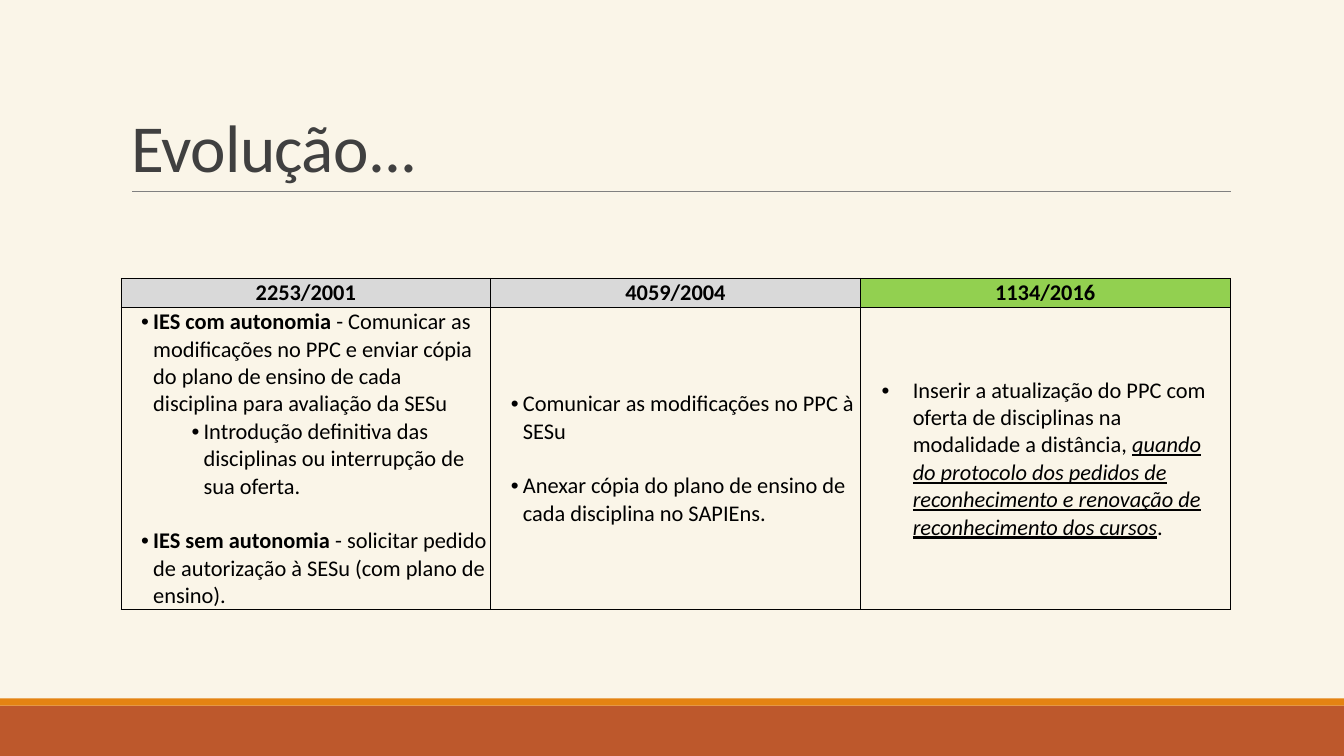
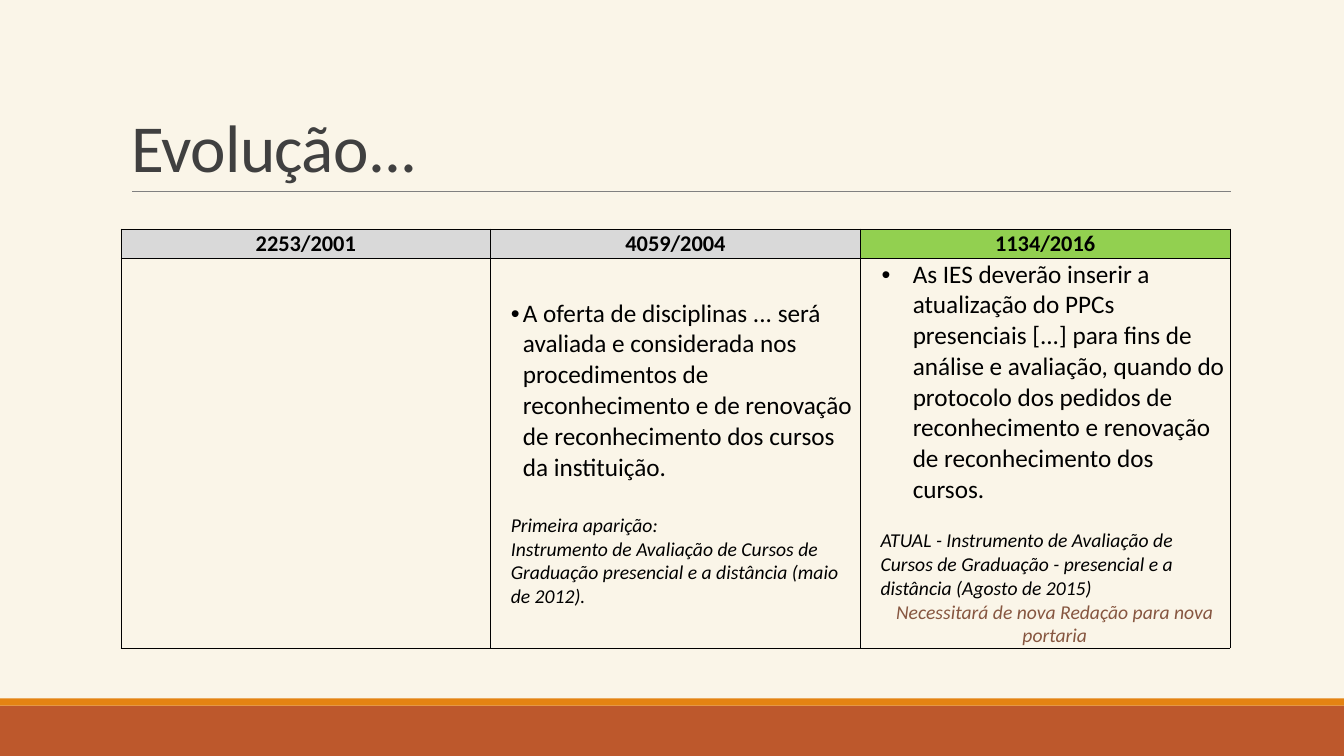
from dataclasses import dataclass

from lxml.etree import SubElement
from pptx import Presentation
from pptx.dml.color import RGBColor
from pptx.enum.shapes import MSO_CONNECTOR, MSO_SHAPE
from pptx.enum.text import MSO_ANCHOR, MSO_AUTO_SIZE, PP_ALIGN
from pptx.oxml import parse_xml
from pptx.oxml.ns import nsdecls, qn
from pptx.util import Inches, Pt


@dataclass(frozen=True)
class Theme:
    font: str = "Calibri"
    background: str = "FAF5E8"
    footer: str = "BD582C"
    accent: str = "E48312"
    rule: str = "808080"
    title: str = "404040"
    text: str = "000000"
    remark: str = "865640"
    past: str = "D9D9D9"
    current: str = "92D050"
    title_size: int = 48
    large_size: int = 18
    body_size: int = 16
    note_size: int = 14
    line_width: float = 0.5


THEME = Theme()
HEADERS = (
    ("2253/2001", THEME.past),
    ("4059/2004", THEME.past),
    ("1134/2016", THEME.current),
)
BULLET = (0.31, -0.12)
SUB_BULLET = (0.81, -0.12)
WIDE_BULLET = (0.51, -0.31)
PLAIN = (0.19, 0)


@dataclass(frozen=True)
class Span:
    text: str
    bold: bool = False
    italic: bool = False
    underline: bool = False
    color: str = THEME.text


@dataclass(frozen=True)
class Item:
    spans: tuple
    indent: tuple = BULLET
    size: int = THEME.body_size
    gap: float = 0
    align: PP_ALIGN = PP_ALIGN.LEFT


def rgb(value):
    return RGBColor.from_string(value)


def style_run(run, size, color):
    run.font.name = THEME.font
    run.font.size = Pt(size)
    run.font.color.rgb = rgb(color)


def add_band(page, top, height, color):
    band = page.shapes.add_shape(
        MSO_SHAPE.RECTANGLE, 0, Inches(top), Inches(13.33), Inches(height)
    )
    band.shadow.inherit = False
    band.fill.solid()
    band.fill.fore_color.rgb = rgb(color)
    band.line.fill.background()
    return band


def add_rule(page):
    rule = page.shapes.add_connector(
        MSO_CONNECTOR.STRAIGHT, Inches(1.31), Inches(1.9), Inches(12.21), Inches(1.9)
    )
    rule.line.color.rgb = rgb(THEME.rule)
    rule.line.width = Pt(THEME.line_width)
    SubElement(rule.element.spPr, qn("a:effectLst"))
    return rule


def decorate_layout(layout, page):
    layout.background.fill.solid()
    layout.background.fill.fore_color.rgb = rgb(THEME.background)
    decorations = (
        add_band(page, 7, 0.5, THEME.footer),
        add_band(page, 6.93, 0.07, THEME.accent),
        add_rule(page),
    )
    for shape in decorations:
        layout.shapes.element.append(shape.element)


def set_title(page, text):
    title = page.shapes.title
    title.left, title.top = Inches(1.2), Inches(0.31)
    title.width, title.height = Inches(11), Inches(1.59)
    frame = title.text_frame
    frame.text = text
    frame.auto_size = MSO_AUTO_SIZE.NONE
    frame.vertical_anchor = MSO_ANCHOR.BOTTOM
    paragraph = frame.paragraphs[0]
    paragraph.alignment = PP_ALIGN.LEFT
    paragraph.line_spacing = 0.85
    run = paragraph.runs[0]
    style_run(run, THEME.title_size, THEME.title)
    run.font._element.set("spc", "-50")


def format_cell(cell, fill=None):
    cell.margin_left = cell.margin_top = cell.margin_right = Inches(0.01)
    cell.margin_bottom = 0
    cell.vertical_anchor = MSO_ANCHOR.MIDDLE
    if fill:
        cell.fill.solid()
        cell.fill.fore_color.rgb = rgb(fill)
    else:
        cell.fill.background()
    properties = cell._tc.get_or_add_tcPr()
    for index, side in enumerate(("lnL", "lnR", "lnT", "lnB")):
        border = parse_xml(
            f'<a:{side} {nsdecls("a")} w="{Pt(THEME.line_width)}"><a:solidFill>'
            f'<a:srgbClr val="{THEME.text}"/></a:solidFill></a:{side}>'
        )
        properties.insert(index, border)


def write_item(paragraph, item):
    margin, hanging = item.indent
    properties = paragraph._p.get_or_add_pPr()
    properties.set("marL", str(Inches(margin)))
    properties.set("indent", str(Inches(hanging)))
    if hanging:
        SubElement(properties, qn("a:buFont"), typeface="Arial")
        SubElement(properties, qn("a:buChar"), char="•")
    paragraph.alignment = item.align
    if item.gap:
        paragraph.space_before = Pt(item.gap)
    for span in item.spans:
        run = paragraph.add_run()
        run.text = span.text
        style_run(run, item.size, span.color)
        run.font.bold = span.bold
        run.font.italic = span.italic
        run.font.underline = span.underline


def write_cell(cell, items):
    frame = cell.text_frame
    for index, item in enumerate(items):
        paragraph = frame.add_paragraph() if index else frame.paragraphs[0]
        write_item(paragraph, item)


def add_comparison(page, top, body_height, columns):
    header_height = 0.29
    table = page.shapes.add_table(
        2, len(HEADERS), Inches(1.2), Inches(top),
        Inches(11), Inches(header_height + body_height),
    ).table
    table.first_row = table.horz_banding = False
    table.rows[0].height = Inches(header_height)
    table.rows[1].height = Inches(body_height)
    for index, ((label, fill), items) in enumerate(zip(HEADERS, columns)):
        header, body = table.cell(0, index), table.cell(1, index)
        format_cell(header, fill)
        format_cell(body)
        heading = Item((Span(label, bold=True),), (0, 0), align=PP_ALIGN.CENTER)
        write_cell(header, (heading,))
        write_cell(body, items)


COMMUNICATION = (
    (
        Item((
            Span("IES com autonomia", bold=True),
            Span(" - Comunicar as modificações no PPC e enviar cópia do plano de "
                 "ensino de cada disciplina para avaliação da SESu"),
        )),
        Item((Span("Introdução definitiva das disciplinas ou interrupção de sua "
                   "oferta."),), SUB_BULLET),
        Item((
            Span("IES sem autonomia", bold=True),
            Span(" - solicitar pedido de autorização à SESu (com plano de ensino)."),
        ), gap=19.5),
    ),
    (
        Item((Span("Comunicar as modificações no PPC à SESu"),)),
        Item((Span("Anexar cópia do plano de ensino de cada disciplina no "
                   "SAPIEns."),), gap=19.5),
    ),
    (
        Item((
            Span("Inserir a atualização do PPC com oferta de disciplinas na "
                 "modalidade a distância, "),
            Span("quando do protocolo dos pedidos de reconhecimento e renovação de "
                 "reconhecimento dos cursos", italic=True, underline=True),
            Span("."),
        ), WIDE_BULLET),
    ),
)

EVALUATION = (
    (),
    (
        Item((Span("A oferta de disciplinas ... será avaliada e considerada nos "
                   "procedimentos de reconhecimento e de renovação de "
                   "reconhecimento dos cursos da instituição."),),
             size=THEME.large_size),
        Item((Span("Primeira aparição:", italic=True),), PLAIN,
             THEME.note_size, gap=22),
        Item((Span("Instrumento de Avaliação de Cursos de Graduação presencial e a "
                   "distância (maio de 2012).", italic=True),), PLAIN,
             THEME.note_size),
    ),
    (
        Item((Span("As IES deverão inserir a atualização do PPCs presenciais [...] "
                   "para fins de análise e avaliação, quando do protocolo dos "
                   "pedidos de reconhecimento e renovação de reconhecimento dos "
                   "cursos."),), WIDE_BULLET, THEME.large_size),
        Item((Span("ATUAL - Instrumento de Avaliação de Cursos de Graduação - "
                   "presencial e a distância (Agosto de 2015)", italic=True),),
             PLAIN, THEME.note_size, gap=17),
        Item((Span("Necessitará de nova Redação para nova portaria", italic=True,
                   color=THEME.remark),), PLAIN, THEME.note_size,
             align=PP_ALIGN.CENTER),
    ),
)


def main():
    deck = Presentation()
    deck.slide_width, deck.slide_height = Inches(13.33), Inches(7.5)
    layout = deck.slide_layouts.get_by_name("Title Only")
    tables = ((2.76, 2.94, COMMUNICATION), (2.27, 3.81, EVALUATION))
    pages = [deck.slides.add_slide(layout) for _ in tables]
    decorate_layout(layout, pages[0])
    for page, (top, body_height, columns) in zip(pages, tables):
        set_title(page, "Evolução...")
        add_comparison(page, top, body_height, columns)
    deck.save("out.pptx")


if __name__ == "__main__":
    main()
